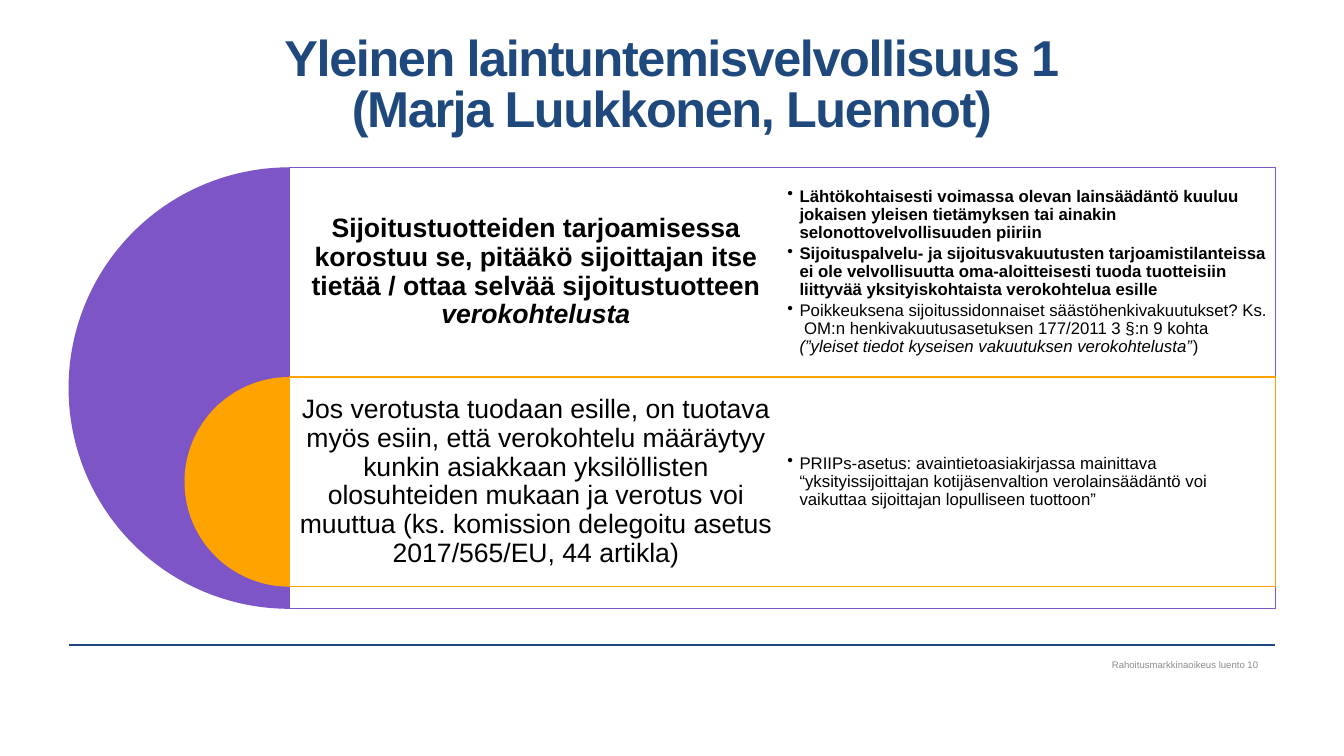
"""Build a slide on the general duty to know the law."""
import lxml.etree
import pptx
import pptx.dml.color
import pptx.enum.shapes
import pptx.enum.text
import pptx.oxml.ns
import pptx.util

PX = 9144
COLORS = {"navy": "1F497D", "purple": "7D55C7", "orange": "FFA300",
          "white": "FFFFFF", "black": "000000", "grey": "8C8C8C"}
ALIGN = pptx.enum.text.PP_ALIGN
ANCHOR = pptx.enum.text.MSO_ANCHOR
SHAPE = pptx.enum.shapes.MSO_SHAPE

LEFT, RIGHT, SPLIT, TOP = 68, 1265, 776, 166
PANEL_X, DISC, ROW = 287, 438, 208

DUTY = [[("Sijoitustuotteiden tarjoamisessa korostuu se, pitääkö sijoittajan "
          "itse tietää / ottaa selvää sijoitustuotteen ", "b"),
         ("verokohtelusta", "bi")]]
DUTY_POINTS = [
    [("Lähtökohtaisesti voimassa olevan lainsäädäntö kuuluu jokaisen yleisen "
      "tietämyksen tai ainakin selonottovelvollisuuden piiriin", "b")],
    [("Sijoituspalvelu- ja sijoitusvakuutusten tarjoamistilanteissa ei ole "
      "velvollisuutta oma-aloitteisesti tuoda tuotteisiin liittyvää "
      "yksityiskohtaista verokohtelua esille", "b")],
    [("Poikkeuksena sijoitussidonnaiset säästöhenkivakuutukset? Ks. "
      " OM:n henkivakuutusasetuksen 177/2011 3 §:n 9 kohta ", ""),
     ("(”yleiset tiedot kyseisen vakuutuksen verokohtelusta”", "i"),
     (")", "")]]
TAX = [[("Jos verotusta tuodaan esille, on tuotava myös esiin, että "
         "verokohtelu määräytyy kunkin asiakkaan yksilöllisten "
         "olosuhteiden mukaan ja verotus voi muuttua (ks. komission "
         "delegoitu asetus 2017/565/EU, 44 artikla)", "")]]
TAX_POINTS = [[("PRIIPs-asetus: avaintietoasiakirjassa mainittava "
                "“yksityissijoittajan kotijäsenvaltion verolainsäädäntö voi "
                "vaikuttaa sijoittajan lopulliseen tuottoon”", "")]]


def rgb(name):
    """Return the named colour."""
    return pptx.dml.color.RGBColor.from_string(COLORS[name])


def box(*lengths):
    """Turn px lengths into EMU."""
    return [n * PX for n in lengths]


def add_child(parent, tag, **attrs):
    """Append a drawing element with attributes."""
    return lxml.etree.SubElement(parent, pptx.oxml.ns.qn(tag), **attrs)


def add_bullet(p):
    """Give a paragraph a hanging round bullet."""
    pPr = p._p.get_or_add_pPr()
    pPr.set("marL", str(12 * PX))
    pPr.set("indent", str(-12 * PX))
    add_child(pPr, "a:buChar", char="•")


def add_text(s, place, paragraphs, size, color="black", align=ALIGN.CENTER,
             anchor=ANCHOR.MIDDLE, insets=(8, 8, 8, 8), spacing=0.9,
             bullets=False):
    """Add a text box of paragraphs made of styled runs."""
    tf = s.shapes.add_textbox(*box(*place)).text_frame
    tf.word_wrap = True
    tf.vertical_anchor = anchor
    (tf.margin_left, tf.margin_top,
     tf.margin_right, tf.margin_bottom) = box(*insets)
    for i, pieces in enumerate(paragraphs):
        p = tf.add_paragraph() if i else tf.paragraphs[0]
        if bullets:
            add_bullet(p)
            p.space_after = pptx.util.Pt(2)
        p.alignment = align
        p.line_spacing = spacing
        for text, style in pieces:
            r = p.add_run()
            r.text = text
            r.font.name = "Arial"
            r.font.size = pptx.util.Pt(size)
            r.font.bold = "b" in style
            r.font.italic = "i" in style
            r.font.color.rgb = rgb(color)
    return tf


def add_title(s):
    """Add the two-line title with tightened letters."""
    tf = add_text(s, (LEFT, 35, RIGHT - LEFT, 131), [[]], 36,
                  anchor=ANCHOR.TOP, insets=(0, 0, 0, 0), spacing=0.85)
    p = tf.paragraphs[0]
    p.text = "Yleinen laintuntemisvelvollisuus 1\v(Marja Luukkonen, Luennot)"
    for r in p.runs:
        r.font.name = "Arial"
        r.font.size = pptx.util.Pt(36)
        r.font.bold = True
        r.font.color.rgb = rgb("navy")
        r.font._element.set("spc", "-100")


def add_half_disc(s, top, size, color):
    """Add a left half disc that ends at the panel edge."""
    sp = s.shapes.add_shape(
        SHAPE.PIE, *box(PANEL_X - size // 2, top, size, size))
    sp.shadow.inherit = False
    sp.adjustments[0] = 54
    sp.adjustments[1] = 162
    sp.fill.solid()
    sp.fill.fore_color.rgb = rgb(color)
    sp.line.fill.background()


def add_panel(s, top, height, color):
    """Add a translucent white panel with a coloured outline."""
    sp = s.shapes.add_shape(
        SHAPE.RECTANGLE, *box(PANEL_X, top, RIGHT - PANEL_X, height))
    sp.shadow.inherit = False
    sp.fill.solid()
    sp.fill.fore_color.rgb = rgb("white")
    fill = sp._element.spPr.find(".//" + pptx.oxml.ns.qn("a:srgbClr"))
    add_child(fill, "a:alpha", val="90000")
    sp.line.color.rgb = rgb(color)
    sp.line.width = pptx.util.Pt(0.75)


def add_rule(s, y):
    """Add the thin line above the footer."""
    line = s.shapes.add_connector(
        pptx.enum.shapes.MSO_CONNECTOR.STRAIGHT, *box(LEFT, y, RIGHT, y))
    line.line.color.rgb = rgb("navy")
    line.line.width = pptx.util.Pt(1)
    add_child(line._element.spPr, "a:effectLst")


def main():
    """Build and save the slide."""
    prs = pptx.Presentation()
    prs.slide_width, prs.slide_height = box(1333, 750)
    s = prs.slides.add_slide(prs.slide_layouts[6])
    add_rule(s, 640)
    add_title(s)
    for top, size, color in ((TOP, DISC, "purple"),
                             (TOP + ROW, ROW, "orange")):
        add_half_disc(s, top, size, color)
        add_panel(s, top, size, color)
    for i, (claim, points) in enumerate(((DUTY, DUTY_POINTS),
                                         (TAX, TAX_POINTS))):
        top = TOP + i * ROW
        add_text(s, (PANEL_X, top, SPLIT - PANEL_X, ROW), claim, 19)
        add_text(s, (SPLIT, top, RIGHT - SPLIT, ROW), points, 12,
                 align=ALIGN.LEFT, insets=(5, 5, 5, 5), bullets=True)
    add_text(s, (720, 651, 528, 17),
             [[("Rahoitusmarkkinaoikeus luento 10", "")]], 6.8, "grey",
             align=ALIGN.RIGHT, insets=(10, 5, 0, 5), spacing=1.0)
    prs.save("out.pptx")


if __name__ == "__main__":
    main()
